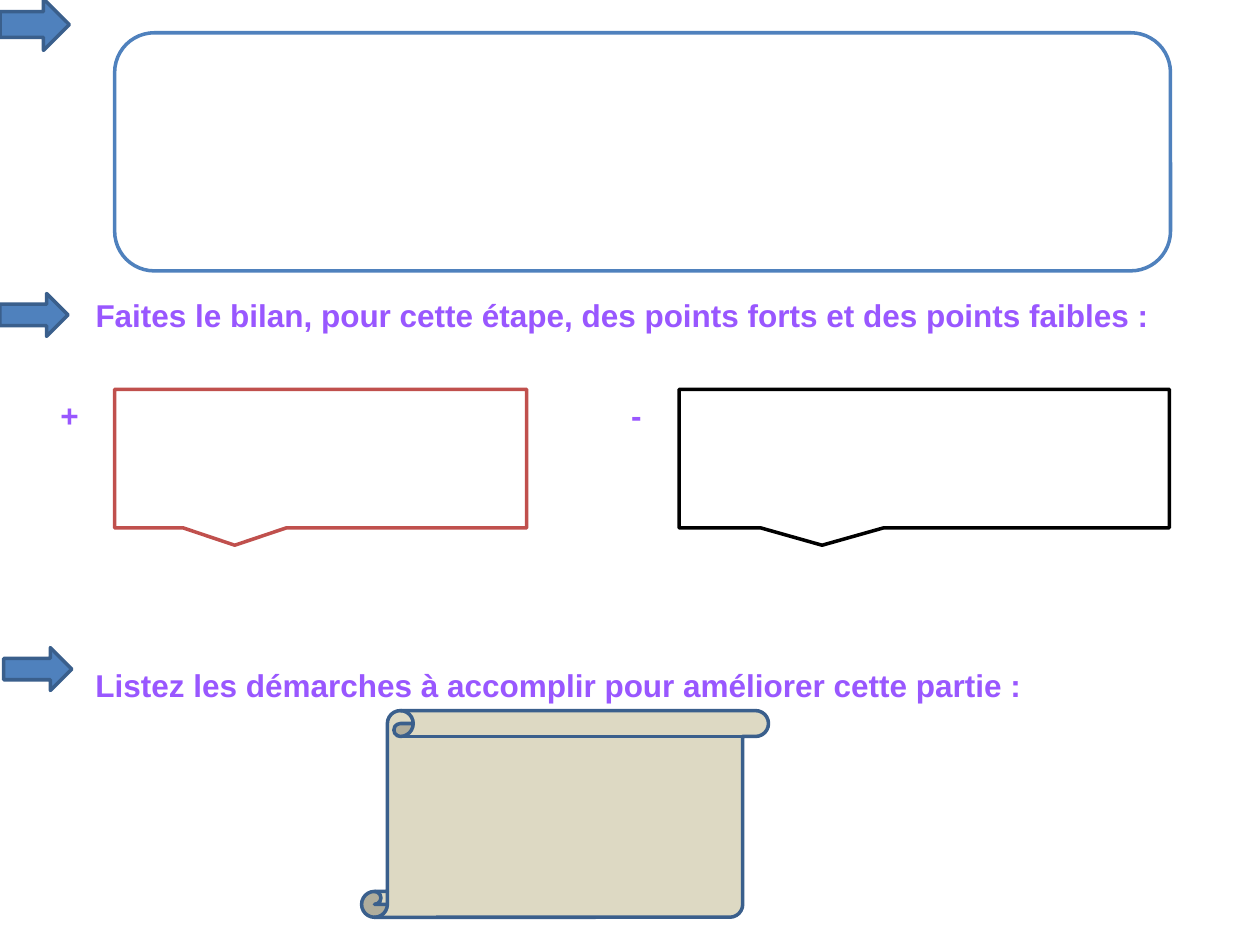
from pptx import Presentation
from pptx.dml.color import RGBColor
from pptx.enum import shapes, text
from pptx.util import Inches, Pt

KIND = shapes.MSO_SHAPE
BLUE, DARK_BLUE, PURPLE = "4F81BD", "3A5F8C", "9957FF"


def add_figure(page, kind, bounds, fill, line):
    figure = page.shapes.add_shape(kind, *map(Inches, bounds))
    figure.shadow.inherit = False
    figure.fill.solid()
    figure.fill.fore_color.rgb = RGBColor.from_string(fill)
    figure.line.color.rgb = RGBColor.from_string(line)
    figure.line.width = Pt(2)


deck = Presentation()
deck.slide_width, deck.slide_height = Inches(10), Inches(7.5)
page = deck.slides.add_slide(deck.slide_layouts[6])

figures = [
    (KIND.ROUNDED_RECTANGLE, (0.91, 0.26, 8.38, 1.89), "FFFFFF", BLUE),
    (KIND.RECTANGULAR_CALLOUT, (0.91, 3.09, 3.27, 1.1), "FFFFFF", "C0504D"),
    (KIND.RECTANGULAR_CALLOUT, (5.39, 3.09, 3.89, 1.1), "FFFFFF", "000000"),
    (KIND.RIGHT_ARROW, (0, 2.33, 0.54, 0.34), BLUE, DARK_BLUE),
    (KIND.RIGHT_ARROW, (0, -0.01, 0.55, 0.41), BLUE, DARK_BLUE),
    (KIND.RIGHT_ARROW, (0.03, 5.14, 0.54, 0.34), BLUE, DARK_BLUE),
    (KIND.VERTICAL_SCROLL, (2.87, 5.64, 3.23, 1.64), "DDD9C3", DARK_BLUE),
]
for kind, bounds, fill, line in figures:
    add_figure(page, kind, bounds, fill, line)

labels = [
    ("Faites le bilan, pour cette étape, des points forts et des points faibles :", 0.66, 2.3, 8.58, True),
    ("+", 0.38, 3.09, 0.35, False),
    ("-", 4.91, 3.09, 0.29, False),
    ("Listez les démarches à accomplir pour améliorer cette partie :", 0.66, 5.24, 8.77, True),
]
for wording, left, top, width, wrap in labels:
    box = page.shapes.add_textbox(Inches(left), Inches(top), Inches(width), Inches(0.4))
    frame = box.text_frame
    frame.text = wording
    frame.word_wrap = wrap
    frame.auto_size = text.MSO_AUTO_SIZE.SHAPE_TO_FIT_TEXT
    font = frame.paragraphs[0].runs[0].font
    font.name, font.size, font.bold = "Arial", Pt(18), True
    font.color.rgb = RGBColor.from_string(PURPLE)

deck.save("out.pptx")
